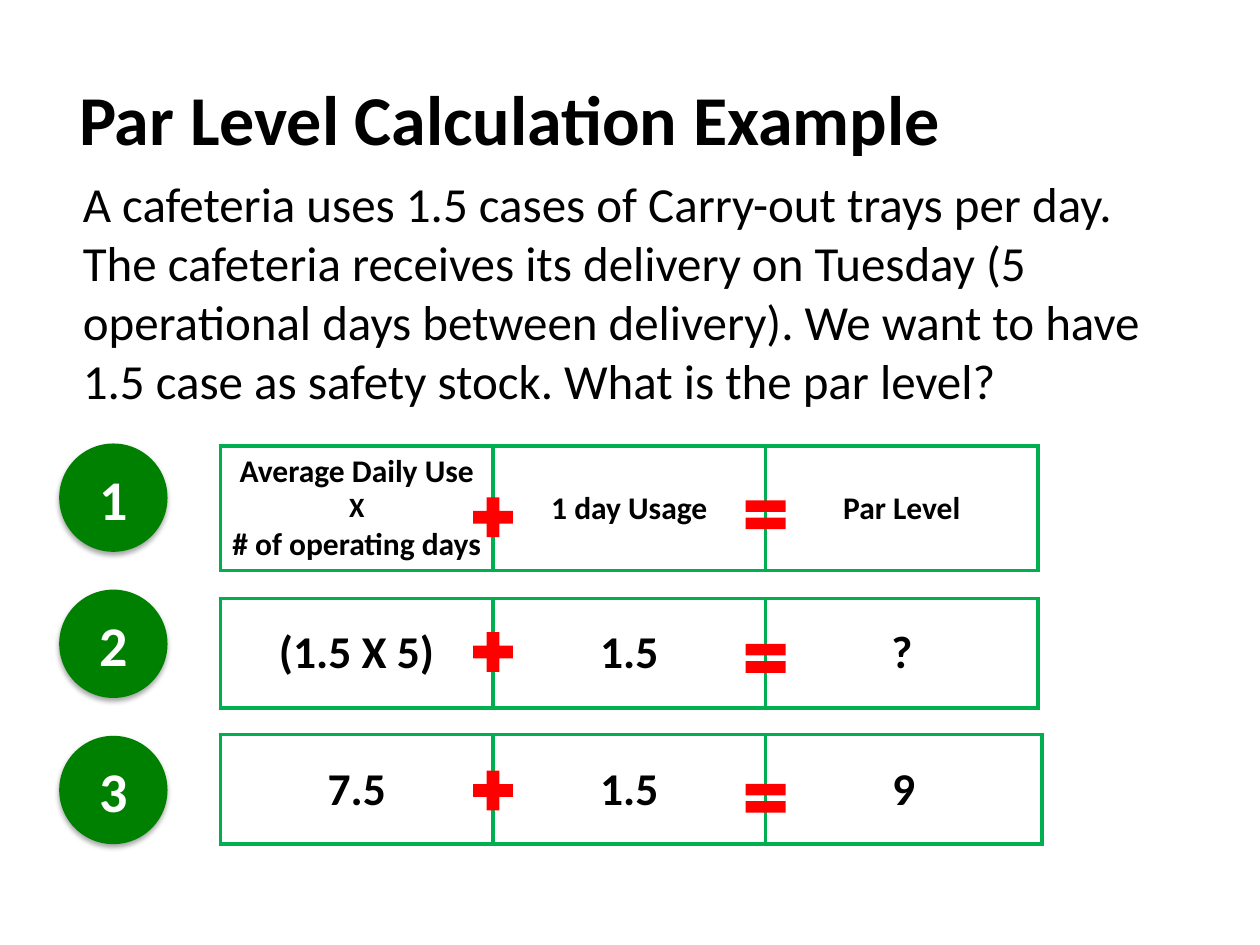
from lxml.etree import SubElement
from pptx import Presentation
from pptx.dml.color import RGBColor
from pptx.enum.shapes import MSO_SHAPE as Preset
from pptx.enum.text import MSO_ANCHOR as Anchor, PP_ALIGN as Align
from pptx.oxml.ns import qn
from pptx.util import Inches, Pt

TITLE = "Par Level Calculation Example"
QUESTION = (
    "A cafeteria uses 1.5 cases of Carry-out trays per day. "
    "The cafeteria receives its delivery on Tuesday (5 operational days between delivery). "
    "We want to have 1.5 case as safety stock. What is the par level?"
)
STEPS = [
    {"cells": ["Average Daily Use\nX\n# of operating days", "1 day Usage", "Par Level"],
     "size": "label", "top": 3.54, "height": 0.99, "plus": 3.89, "equal": 3.89, "extra": 0},
    {"cells": ["(1.5 X 5)", "1.5", "?"],
     "size": "value", "top": 4.75, "height": 0.87, "plus": 4.96, "equal": 5.03, "extra": 0},
    {"cells": ["7.5", "1.5", "9"],
     "size": "value", "top": 5.83, "height": 0.87, "plus": 6.06, "equal": 6.14, "extra": 0.03},
]
THEME = {
    "font": "Calibri",
    "text": "000000", "badge_text": "FFFFFF", "badge": "008000",
    "border": "00B050", "sign": "FF0000", "shadow": "000000",
    "title": 40, "body": 28, "number": 32, "value": 26, "label": 18, "times": 16,
    "border_width": 2.25,
}
SLIDE_WIDTH, SLIDE_HEIGHT = 10, 7.5
TABLE_LEFT, TABLE_WIDTH, COLUMNS = 1.75, 6.49, 3
COLUMN_WIDTH = TABLE_WIDTH / COLUMNS
BADGE_LEFT, BADGE_TOP, BADGE_SIZE, BADGE_STEP = 0.47, 3.52, 0.86, 1.16
SIGN_WIDTH = 0.43
SIGNS = [("plus", Preset.MATH_PLUS, 0.43), ("equal", Preset.MATH_EQUAL, 0.39)]


def inches(*lengths):
    return [Inches(length) for length in lengths]


def color(name):
    return RGBColor.from_string(THEME[name])


def write(frame, text, size, ink="text", bold=True, align=Align.CENTER):
    frame.text = text
    for paragraph in frame.paragraphs:
        paragraph.alignment = align
        for run in paragraph.runs:
            font = run.font
            font.name, font.bold = THEME["font"], bold
            font.size = Pt(THEME["times" if run.text == "X" else size])
            font.color.rgb = color(ink)


def add_text(slide, box, text, size, bold, anchor):
    frame = slide.shapes.add_textbox(*inches(*box)).text_frame
    frame.word_wrap = True
    frame.vertical_anchor = anchor
    write(frame, text, size, bold=bold, align=Align.LEFT)


def add_plain_shape(slide, preset, box, fill):
    shape = slide.shapes.add_shape(preset, *inches(*box))
    shape.shadow.inherit = False
    shape.fill.solid()
    shape.fill.fore_color.rgb = color(fill)
    shape.line.fill.background()
    return shape


def add_badge(slide, index):
    box = (BADGE_LEFT, BADGE_TOP + index * BADGE_STEP, BADGE_SIZE, BADGE_SIZE)
    badge = add_plain_shape(slide, Preset.FLOWCHART_CONNECTOR, box, "badge")
    effects = badge.element.spPr.find(qn("a:effectLst"))
    shadow = SubElement(effects, qn("a:outerShdw"), blurRad=str(Pt(3.1)),
                        dist=str(Pt(1.8)), dir="5400000", rotWithShape="0")
    tint = SubElement(shadow, qn("a:srgbClr"), val=THEME["shadow"])
    SubElement(tint, qn("a:alpha"), val="35000")
    badge.text_frame.vertical_anchor = Anchor.MIDDLE
    write(badge.text_frame, str(index + 1), "number", "badge_text")


def style_cell(cell, text, size):
    cell.margin_left = cell.margin_right = Inches(0.07)
    cell.margin_top = cell.margin_bottom = 0
    cell.vertical_anchor = Anchor.MIDDLE
    write(cell.text_frame, text, size)
    properties = cell._tc.get_or_add_tcPr()
    for side in ("a:lnL", "a:lnR", "a:lnT", "a:lnB"):
        line = SubElement(properties, qn(side), w=str(Pt(THEME["border_width"])))
        fill = SubElement(line, qn("a:solidFill"))
        SubElement(fill, qn("a:srgbClr"), val=THEME["border"])
    cell.fill.background()


def add_formula(slide, step):
    box = (TABLE_LEFT, step["top"], TABLE_WIDTH + step["extra"], step["height"])
    table = slide.shapes.add_table(1, COLUMNS, *inches(*box)).table
    table.first_row = table.horz_banding = False
    for index, text in enumerate(step["cells"]):
        extra = step["extra"] if index == COLUMNS - 1 else 0
        table.columns[index].width = Inches(COLUMN_WIDTH + extra)
        style_cell(table.cell(0, index), text, step["size"])
    for boundary, (sign, preset, height) in enumerate(SIGNS, 1):
        left = TABLE_LEFT + boundary * COLUMN_WIDTH - SIGN_WIDTH / 2
        add_plain_shape(slide, preset, (left, step[sign], SIGN_WIDTH, height), "sign")


def main():
    presentation = Presentation()
    presentation.slide_width, presentation.slide_height = inches(SLIDE_WIDTH, SLIDE_HEIGHT)
    slide = presentation.slides.add_slide(presentation.slide_layouts[6])
    add_text(slide, (0.53, 0.45, 8.96, 0.97), TITLE, "title", True, Anchor.MIDDLE)
    add_text(slide, (0.56, 1.33, 8.9, 1.99), QUESTION, "body", False, Anchor.TOP)
    for index, step in enumerate(STEPS):
        add_badge(slide, index)
        add_formula(slide, step)
    presentation.save("out.pptx")


if __name__ == "__main__":
    main()
